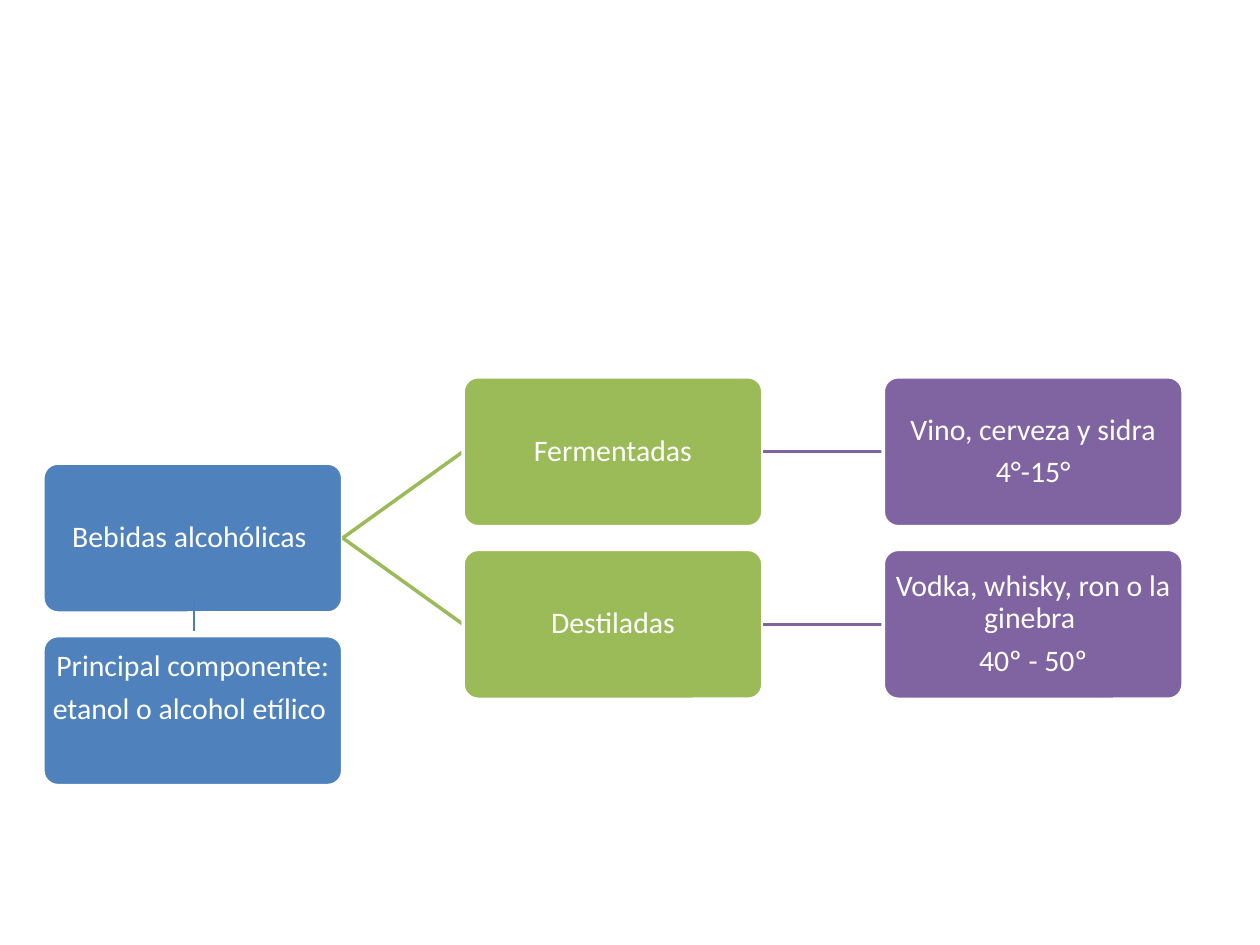
from lxml.etree import SubElement
from pptx import Presentation
from pptx.dml.color import RGBColor
from pptx.enum.shapes import MSO_CONNECTOR, MSO_SHAPE
from pptx.enum.text import MSO_ANCHOR, PP_ALIGN
from pptx.oxml.ns import qn
from pptx.util import Inches, Pt

COLORS = {"blue": "4F81BD", "green": "9BBB59", "purple": "8064A2",
          "white": "FFFFFF", "stem": "4B7EBC"}
BOX_W, BOX_H = 2.38, 1.19
LEFT, COL_STEP = 0.34, 3.335
TOP, ROW_STEP = 2.99, 1.37
RIGHT_SIDE, LEFT_SIDE = 3, 1

# name: (column, row, colour, parent, lines)
BOXES = {
    "drinks": (0, 0.5, "blue", None, ["Bebidas alcohólicas "]),
    "fermented": (1, 0, "green", "drinks", ["Fermentadas"]),
    "fermented examples": (2, 0, "purple", "fermented",
                           ["Vino, cerveza y sidra", "4°-15°"]),
    "distilled": (1, 1, "green", "drinks", ["Destiladas"]),
    "distilled examples": (2, 1, "purple", "distilled",
                           ["Vodka, whisky, ron o la ginebra ", "40º - 50º"]),
    "component": (0, 1.5, "blue", None,
                  ["Principal componente:", "etanol o alcohol etílico "]),
}

prs = Presentation()
prs.slide_width, prs.slide_height = Inches(10), Inches(7.5)
s = prs.slides.add_slide(prs.slide_layouts[6])


def add_line(x1, y1, x2, y2, color, width):
    line = s.shapes.add_connector(MSO_CONNECTOR.STRAIGHT, Inches(x1), Inches(y1),
                                  Inches(x2), Inches(y2))
    line.line.color.rgb = RGBColor.from_string(COLORS[color])
    line.line.width = Pt(width)
    SubElement(line._element.spPr, qn("a:effectLst"))
    return line


shapes = {}
for name, (col, row, color, parent, lines) in BOXES.items():
    sp = s.shapes.add_shape(MSO_SHAPE.ROUNDED_RECTANGLE,
                            Inches(LEFT + col * COL_STEP), Inches(TOP + row * ROW_STEP),
                            Inches(BOX_W), Inches(BOX_H))
    sp.adjustments[0] = 0.1
    sp.shadow.inherit = False
    sp.fill.solid()
    sp.fill.fore_color.rgb = RGBColor.from_string(COLORS[color])
    sp.line.color.rgb = RGBColor.from_string(COLORS["white"])
    sp.line.width = Pt(2)
    shapes[name] = sp

    tf = sp.text_frame
    tf.word_wrap = True
    tf.vertical_anchor = MSO_ANCHOR.MIDDLE
    tf.margin_left = tf.margin_right = tf.margin_top = tf.margin_bottom = Inches(0.01)
    tf.text = "\n".join(lines)
    for p in tf.paragraphs:
        p.alignment = PP_ALIGN.CENTER
        p.line_spacing = 0.9
        p.space_after = Pt(6)
        for r in p.runs:
            r.font.name = "Calibri"
            r.font.size = Pt(17)
            r.font.color.rgb = RGBColor.from_string(COLORS["white"])

    if parent:
        branch = add_line(0, 0, 1, 1, color, 2)
        branch.begin_connect(shapes[parent], RIGHT_SIDE)
        branch.end_connect(sp, LEFT_SIDE)
        sp._element.addprevious(branch._element)  # the box border covers the line end

# The component text sits above the middle of its box
shapes["component"].text_frame.margin_bottom = Inches(0.36)
add_line(1.54, 4.77, 1.54, 5.01, "stem", 0.75)

prs.save("out.pptx")
